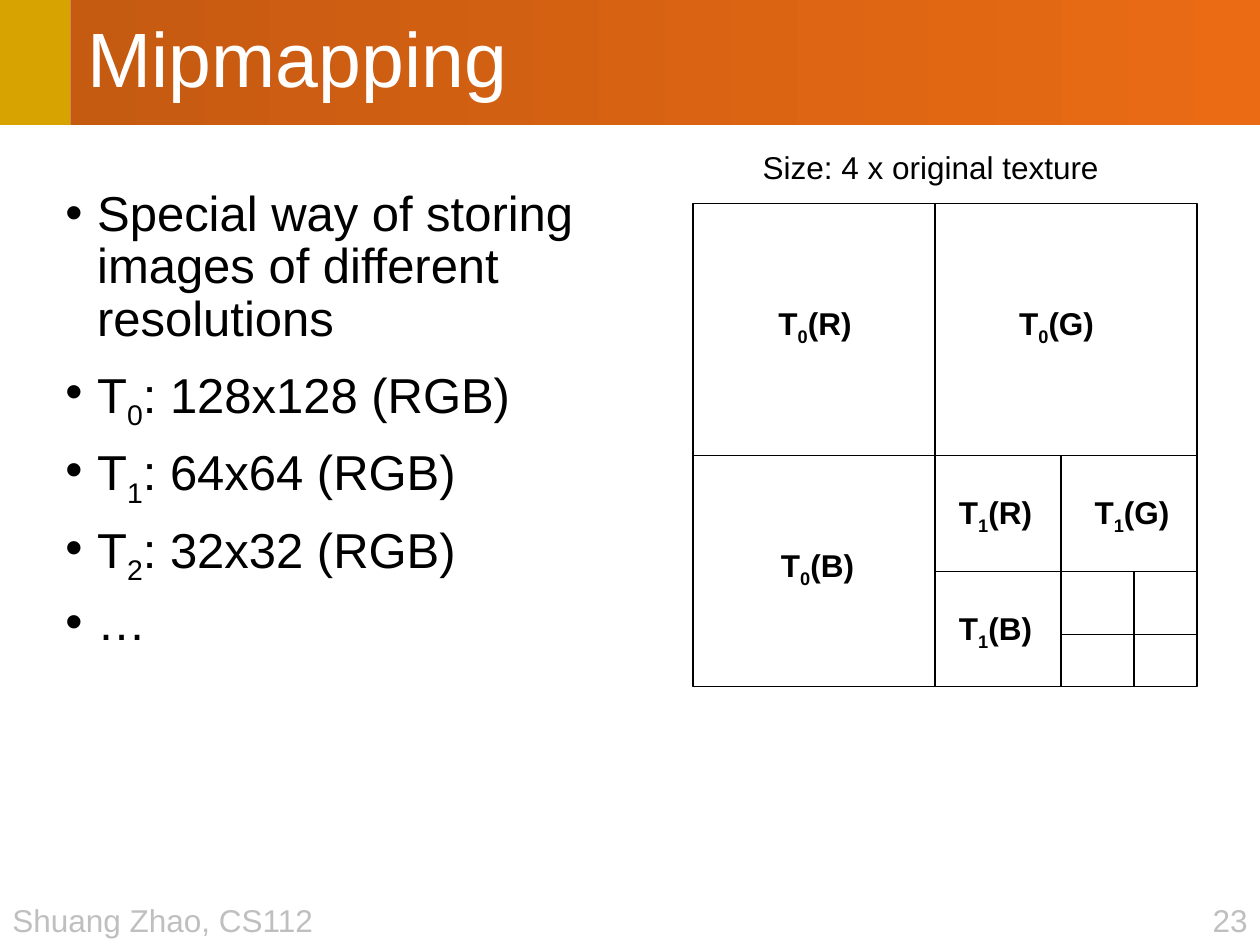
from dataclasses import dataclass

from lxml import etree
from pptx import Presentation
from pptx import util as u
from pptx.dml.color import RGBColor
from pptx.enum import shapes, text
from pptx.oxml import ns

Cm = u.Cm


@dataclass(frozen=True)
class Theme:
    """Hold the colours and type sizes."""
    face: str = "Arial"
    gold: str = "D6A300"
    rust: str = "C55A11"
    flame: str = "EA6B14"
    white: str = "FFFFFF"
    ink: str = "000000"
    grey: str = "BFBFBF"
    head: int = 44
    body: int = 28
    small: int = 18
    rule: float = 0.75


LOOK = Theme()
LEFT, MID, RIGHT = text.PP_ALIGN.LEFT, text.PP_ALIGN.CENTER, text.PP_ALIGN.RIGHT


def rgb(code):
    """Turn a hex code into a colour."""
    return RGBColor.from_string(code)


def style(para, size, tint, bold=False):
    """Set the font of a whole paragraph."""
    font = para.font
    font.name, font.size, font.bold = LOOK.face, u.Pt(size), bold
    font.color.rgb = rgb(tint)


def write(para, parts):
    """Add runs, with every second one as a subscript."""
    for i, part in enumerate(parts):
        run = para.add_run()
        run.text = part
        if i % 2:
            run.font._element.set("baseline", "-25000")


def block(slide, x, y, w, h):
    """Add a plain rectangle without fill or shadow."""
    box = slide.shapes.add_shape(
        shapes.MSO_SHAPE.RECTANGLE, Cm(x), Cm(y), Cm(w), Cm(h))
    box.shadow.inherit = False
    box.fill.background()
    box.line.fill.background()
    return box


def label(slide, x, y, w, parts, tint=LOOK.ink, align=MID, bold=False):
    """Add one line of small text."""
    box = slide.shapes.add_textbox(Cm(x), Cm(y), Cm(w), Cm(1.02))
    box.text_frame.word_wrap = False
    para = box.text_frame.paragraphs[0]
    para.alignment = align
    write(para, parts)
    style(para, LOOK.small, tint, bold)


def rule(slide, x1, y1, x2, y2):
    """Draw a thin straight line."""
    line = slide.shapes.add_connector(
        shapes.MSO_CONNECTOR.STRAIGHT, Cm(x1), Cm(y1), Cm(x2), Cm(y2))
    line.line.color.rgb = rgb(LOOK.ink)
    line.line.width = u.Pt(LOOK.rule)
    etree.SubElement(line._element.spPr, ns.qn("a:effectLst"))


def banner(slide, x, y, w, h, title):
    """Place the gold block and the title bar."""
    side = 1.42
    gold = block(slide, x, y, side, h)
    gold.fill.solid()
    gold.fill.fore_color.rgb = rgb(LOOK.gold)
    bar = block(slide, x + side, y, w - side, h)
    bar.fill.gradient()
    bar.fill.gradient_angle = 0
    for stop, tint in zip(bar.fill.gradient_stops, (LOOK.rust, LOOK.flame)):
        stop.color.rgb = rgb(tint)
    bar.text_frame.word_wrap = True
    bar.text_frame.vertical_anchor = text.MSO_ANCHOR.MIDDLE
    para = bar.text_frame.paragraphs[0]
    para.alignment, para.line_spacing = LEFT, 0.9
    para._p.get_or_add_pPr().set("marL", str(Cm(0.1)))
    write(para, [title])
    style(para, LOOK.head, LOOK.white)


def points(slide, x, y, w, h, items):
    """Place the bullet list."""
    frame = slide.shapes.add_textbox(Cm(x), Cm(y), Cm(w), Cm(h)).text_frame
    frame.word_wrap = True
    for i, parts in enumerate(items):
        para = frame.add_paragraph() if i else frame.paragraphs[0]
        para.line_spacing = 0.9
        para.space_before = u.Pt(10 if i else 0)
        props = para._p.get_or_add_pPr()
        props.set("marL", str(Cm(0.64)))
        props.set("indent", str(-Cm(0.64)))
        etree.SubElement(props, ns.qn("a:buFont")).set("typeface", LOOK.face)
        etree.SubElement(props, ns.qn("a:buChar")).set("char", "•")
        write(para, parts)
        style(para, LOOK.body, LOOK.ink)


def mipmap(slide, x, y, w, h):
    """Place the nested texture squares with caption and labels."""
    frame = block(slide, x, y, w, h)
    frame.line.color.rgb = rgb(LOOK.ink)
    frame.line.width = u.Pt(LOOK.rule)
    left = top = 0
    for col, row in ((4.88, 5.08), (7.42, 7.42), (8.89, 8.69)):
        rule(slide, x + col, y + top, x + col, y + h)
        rule(slide, x + left, y + row, x + w, y + row)
        left, top = col, row
    label(slide, x + 1.12, y - 1.25, 7.52, ["Size: 4 x original texture "])
    spots = (("0", "R", 2.46, 2.41), ("0", "G", 7.33, 2.41),
             ("0", "B", 2.51, 7.29), ("1", "R", 6.1, 6.22),
             ("1", "G", 8.85, 6.22), ("1", "B", 6.1, 8.56))
    for level, band, cx, cy in spots:
        label(slide, x + cx - 1.02, y + cy - 0.51, 2.04,
              ["T", level, f"({band})"], bold=True)


def footer(slide, x, y, w, name, page):
    """Place the author at the left and the page at the right."""
    label(slide, x, y, 6.63, [name], LOOK.grey, LEFT)
    label(slide, x + w - 1.3, y, 1.3, [page], LOOK.grey, RIGHT)


def main():
    """Build the slide and save it."""
    deck = Presentation()
    deck.slide_width, deck.slide_height = Cm(25.4), Cm(19.05)
    slide = deck.slides.add_slide(deck.slide_layouts[6])
    banner(slide, 0, 0, 25.4, 2.52, "Mipmapping")
    sizes = [["T", str(i), f": {side}x{side} (RGB)"]
             for i, side in enumerate((128, 64, 32))]
    points(slide, 1.07, 3.68, 12.07, 12.5,
           [["Special way of storing images of different resolutions"],
            *sizes, ["…"]])
    mipmap(slide, 13.97, 4.1, 10.16, 9.74)
    footer(slide, 0, 18.03, 25.4, "Shuang Zhao, CS112", "23")
    deck.save("out.pptx")


if __name__ == "__main__":
    main()
